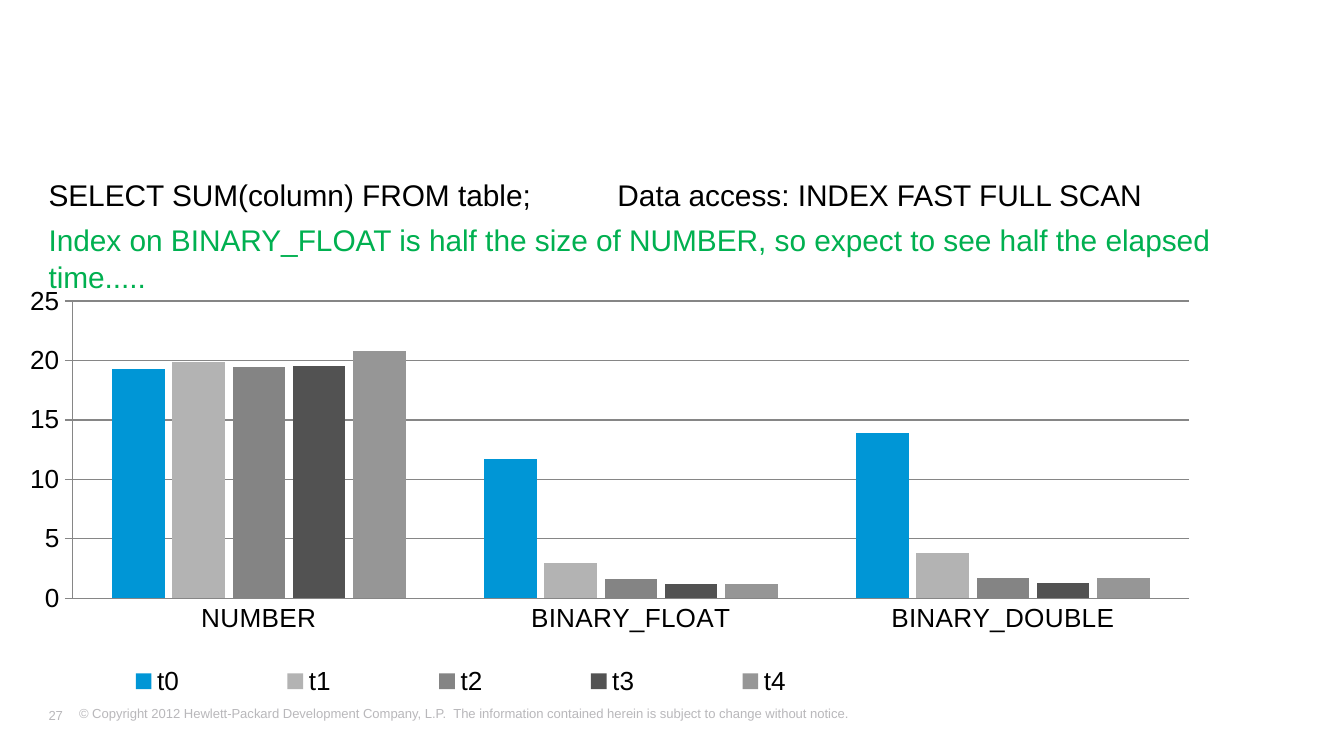
from lxml import etree
from pptx import Presentation
from pptx.chart.data import CategoryChartData
from pptx.dml.color import RGBColor
from pptx.enum import chart as ch, text as tx
from pptx.oxml.ns import qn
from pptx.util import Pt

HUES = {"ink": "000000", "green": "00B050", "foot": "B9B8BB", "grid": "868686",
        "t0": "0096D6", "t1": "B3B3B3", "t2": "848484", "t3": "525252", "t4": "969696"}
CATS = ["NUMBER", "BINARY_FLOAT", "BINARY_DOUBLE"]
TIMES = {"t0": [19.3, 11.7, 13.9], "t1": [19.9, 3, 3.8], "t2": [19.4, 1.6, 1.7],
         "t3": [19.5, 1.2, 1.3], "t4": [20.8, 1.2, 1.7]}


def hue(name):
    return RGBColor.from_string(HUES[name])


def style(font, size, color="ink"):
    font.name, font.size, font.bold = "Arial", Pt(size), False
    font.color.rgb = hue(color)


def write(para, words, size=16, color="ink", after=0, line=None, tab=None):
    """Fill one paragraph with formatted text."""
    para.space_after = Pt(after)
    if line:
        para.line_spacing = line
    if tab:
        stops = etree.SubElement(para._p.get_or_add_pPr(), qn("a:tabLst"))
        etree.SubElement(stops, qn("a:tab"), pos=str(Pt(tab)), algn="l")
    run = para.add_run()
    run.text = words
    style(run.font, size, color)


def place(part, inner=False, **area):
    """Give a chart part a fixed area, in fractions of the chart."""
    old = part.find(qn("c:layout"))
    if old is not None:
        part.remove(old)
    frame = etree.Element(qn("c:layout"))
    box = etree.SubElement(frame, qn("c:manualLayout"))
    if inner:
        etree.SubElement(box, qn("c:layoutTarget"), val="inner")
    for side in "xy":
        etree.SubElement(box, qn(f"c:{side}Mode"), val="edge")
    for side in "xywh":
        etree.SubElement(box, qn(f"c:{side}"), val=str(area[side]))
    spot = part.find(qn("c:legendPos"))
    if spot is None:
        part.insert(0, frame)
    else:
        spot.addnext(frame)


class Deck:
    def __init__(self, wide, high):
        self.prs = Presentation()
        self.prs.slide_width, self.prs.slide_height = Pt(wide), Pt(high)
        self.slide = self.prs.slides.add_slide(self.prs.slide_layouts[6])

    def text(self, area, paras, pad=(0, 0, 0, 0), wrap=True,
             anchor=tx.MSO_ANCHOR.TOP, **form):
        frame = self.slide.shapes.add_textbox(*map(Pt, area)).text_frame
        frame.word_wrap, frame.vertical_anchor = wrap, anchor
        (frame.margin_left, frame.margin_top,
         frame.margin_right, frame.margin_bottom) = map(Pt, pad)
        for i, (words, more) in enumerate(paras):
            para = frame.add_paragraph() if i else frame.paragraphs[0]
            write(para, words, **form, **more)

    def bars(self, area, cats, rows):
        data = CategoryChartData()
        data.categories = cats
        for name, vals in rows.items():
            data.add_series(name, vals)
        kind = ch.XL_CHART_TYPE.COLUMN_CLUSTERED
        chart = self.slide.shapes.add_chart(kind, *map(Pt, area), data).chart
        chart.has_title = False
        style(chart.font, 18)

        # Columns
        plot = chart.plots[0]
        plot.gap_width, plot.overlap, plot.vary_by_categories = 150, -15, False
        for row in plot.series:
            row.format.fill.solid()
            row.format.fill.fore_color.rgb = hue(row.name)

        # Axes
        cat, val = chart.category_axis, chart.value_axis
        val.minimum_scale, val.maximum_scale, val.major_unit = 0, 25, 5
        val.has_major_gridlines = True
        cat.major_tick_mark = ch.XL_TICK_MARK.NONE
        val.major_tick_mark = ch.XL_TICK_MARK.CROSS
        for axis in (cat, val):
            style(axis.tick_labels.font, 14)
        for part in (cat, val, val.major_gridlines):
            part.format.line.color.rgb = hue("grid")
            part.format.line.width = Pt(0.75)

        # Legend and layout
        chart.has_legend = True
        key = chart.legend
        key.position, key.include_in_layout = ch.XL_LEGEND_POSITION.BOTTOM, False
        style(key.font, 14)
        place(key._element, x=0.03, y=0.87, w=0.7, h=0.09)
        place(chart._chartSpace.chart.plotArea, inner=True,
              x=0.06, y=0.09, w=0.92, h=0.645)


def main():
    deck = Deck(720, 405)

    # Footer
    deck.text((35.3, 374.4, 630.7, 18),
              [("© Copyright 2012 Hewlett-Packard Development Company, L.P.  The information "
                "contained herein is subject to change without notice.", {})],
              pad=(7.2, 3.6, 7.2, 3.6), size=7, color="foot")
    deck.text((26, 377.3, 25.2, 11.5), [("27", {})], pad=(0, 3.6, 7.2, 3.6),
              wrap=False, anchor=tx.MSO_ANCHOR.MIDDLE, size=7, color="foot")

    # Elapsed times
    deck.bars((0, 139, 650, 247), CATS, TIMES)

    # Query and remark
    deck.text((26, 93.6, 639.4, 253.4), [
        ("SELECT SUM(column) FROM table;\tData access: INDEX FAST FULL SCAN", {"tab": 304.8}),
        ("Index on BINARY_FLOAT is half the size of NUMBER, so expect to see "
         "half the elapsed time.....", {"color": "green"})], after=4, line=1.05)

    deck.prs.save("out.pptx")


if __name__ == "__main__":
    main()
